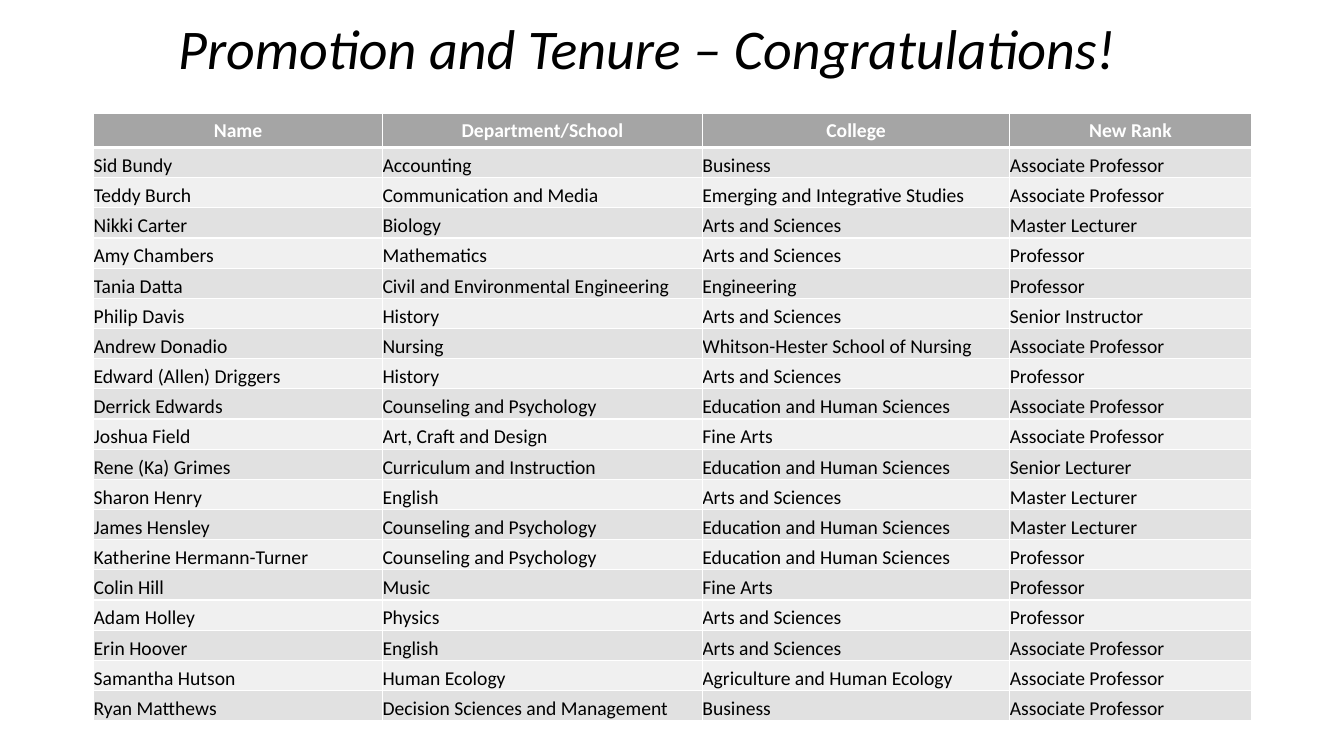
from lxml import etree
from pptx import Presentation
from pptx.dml.color import RGBColor
from pptx.enum.text import MSO_ANCHOR, PP_ALIGN
from pptx.oxml.ns import qn
from pptx.util import Cm, Pt

CENTER = PP_ALIGN.CENTER
LEFT = PP_ALIGN.LEFT
TOP = MSO_ANCHOR.TOP
BOTTOM = MSO_ANCHOR.BOTTOM

FONT = "Calibri"
BLACK = "000000"
WHITE = "FFFFFF"
HEADER_FILL = "A5A5A5"
BAND_FILLS = ("E1E1E1", "F0F0F0")
THIN = 1
THICK = 3

COLUMN_WIDTHS = (7.28, 8.06, 7.75, 6.08)
ROW_HEIGHT = 0.76
HEADER_HEIGHT = 0.84

HEADINGS = ("Name", "Department/School", "College", "New Rank")
FACULTY = (
    ("Sid Bundy", "Accounting", "Business", "Associate Professor"),
    ("Teddy Burch", "Communication and Media", "Emerging and Integrative Studies", "Associate Professor"),
    ("Nikki Carter", "Biology", "Arts and Sciences", "Master Lecturer"),
    ("Amy Chambers", "Mathematics", "Arts and Sciences", "Professor"),
    ("Tania Datta", "Civil and Environmental Engineering", "Engineering", "Professor"),
    ("Philip Davis", "History", "Arts and Sciences", "Senior Instructor"),
    ("Andrew Donadio", "Nursing", "Whitson-Hester School of Nursing", "Associate Professor"),
    ("Edward (Allen) Driggers", "History", "Arts and Sciences", "Professor"),
    ("Derrick Edwards", "Counseling and Psychology", "Education and Human Sciences", "Associate Professor"),
    ("Joshua Field", "Art, Craft and Design", "Fine Arts", "Associate Professor"),
    ("Rene (Ka) Grimes", "Curriculum and Instruction", "Education and Human Sciences", "Senior Lecturer"),
    ("Sharon Henry", "English", "Arts and Sciences", "Master Lecturer"),
    ("James Hensley", "Counseling and Psychology", "Education and Human Sciences", "Master Lecturer"),
    ("Katherine Hermann-Turner", "Counseling and Psychology", "Education and Human Sciences", "Professor"),
    ("Colin Hill", "Music", "Fine Arts", "Professor"),
    ("Adam Holley", "Physics", "Arts and Sciences", "Professor"),
    ("Erin Hoover", "English", "Arts and Sciences", "Associate Professor"),
    ("Samantha Hutson", "Human Ecology", "Agriculture and Human Ecology", "Associate Professor"),
    ("Ryan Matthews", "Decision Sciences and Management", "Business", "Associate Professor"),
)


def color(value):
    return RGBColor.from_string(value)


def write(frame, text, size, ink, align, bold=False, italic=False):
    frame.text = text
    para = frame.paragraphs[0]
    para.alignment = align
    for span in para.runs:
        span.font.name = FONT
        span.font.size = Pt(size)
        span.font.bold = bold
        span.font.italic = italic
        span.font.color.rgb = color(ink)
    return para


def add_title(page, text):
    box = page.shapes.add_textbox(Cm(1.14), Cm(0.41), Cm(30.63), Cm(2.18))
    box.text_frame.word_wrap = True
    box.text_frame.vertical_anchor = TOP
    para = write(box.text_frame, text, 40, BLACK, CENTER, italic=True)
    para.line_spacing = 0.9


def set_borders(cell, top, bottom):
    properties = cell._tc.get_or_add_tcPr()
    for side, width in (("L", THIN), ("R", THIN), ("T", top), ("B", bottom)):
        line = etree.SubElement(properties, qn(f"a:ln{side}"), w=str(Pt(width)))
        fill = etree.SubElement(line, qn("a:solidFill"))
        etree.SubElement(fill, qn("a:srgbClr"), val=WHITE)


def paint(cell, fill, top, bottom):
    set_borders(cell, top, bottom)
    cell.fill.solid()
    cell.fill.fore_color.rgb = color(fill)


def format_header(cell, text):
    write(cell.text_frame, text, 14, WHITE, CENTER, bold=True)
    paint(cell, HEADER_FILL, THIN, THICK)


def format_body(cell, text, index):
    write(cell.text_frame, text, 14, BLACK, LEFT)
    cell.margin_left = cell.margin_right = Cm(0)
    cell.margin_top = cell.margin_bottom = Cm(0)
    cell.vertical_anchor = BOTTOM
    paint(cell, BAND_FILLS[index % 2], THICK if index == 0 else THIN, THIN)


def add_faculty_table(page):
    height = HEADER_HEIGHT + ROW_HEIGHT * len(FACULTY)
    frame = page.shapes.add_table(
        len(FACULTY) + 1, len(HEADINGS),
        Cm(2.36), Cm(2.87), Cm(sum(COLUMN_WIDTHS)), Cm(height),
    )
    table = frame.table
    for column, width in zip(table.columns, COLUMN_WIDTHS):
        column.width = Cm(width)
    for row in table.rows:
        row.height = Cm(ROW_HEIGHT)
    table.rows[0].height = Cm(HEADER_HEIGHT)
    for column, heading in enumerate(HEADINGS):
        format_header(table.cell(0, column), heading)
    for index, member in enumerate(FACULTY):
        for column, text in enumerate(member):
            format_body(table.cell(index + 1, column), text, index)


def main():
    deck = Presentation()
    deck.slide_width = Cm(33.87)
    deck.slide_height = Cm(19.05)
    page = deck.slides.add_slide(deck.slide_layouts[6])
    add_title(page, "Promotion and Tenure – Congratulations! ")
    add_faculty_table(page)
    deck.save("out.pptx")


if __name__ == "__main__":
    main()
